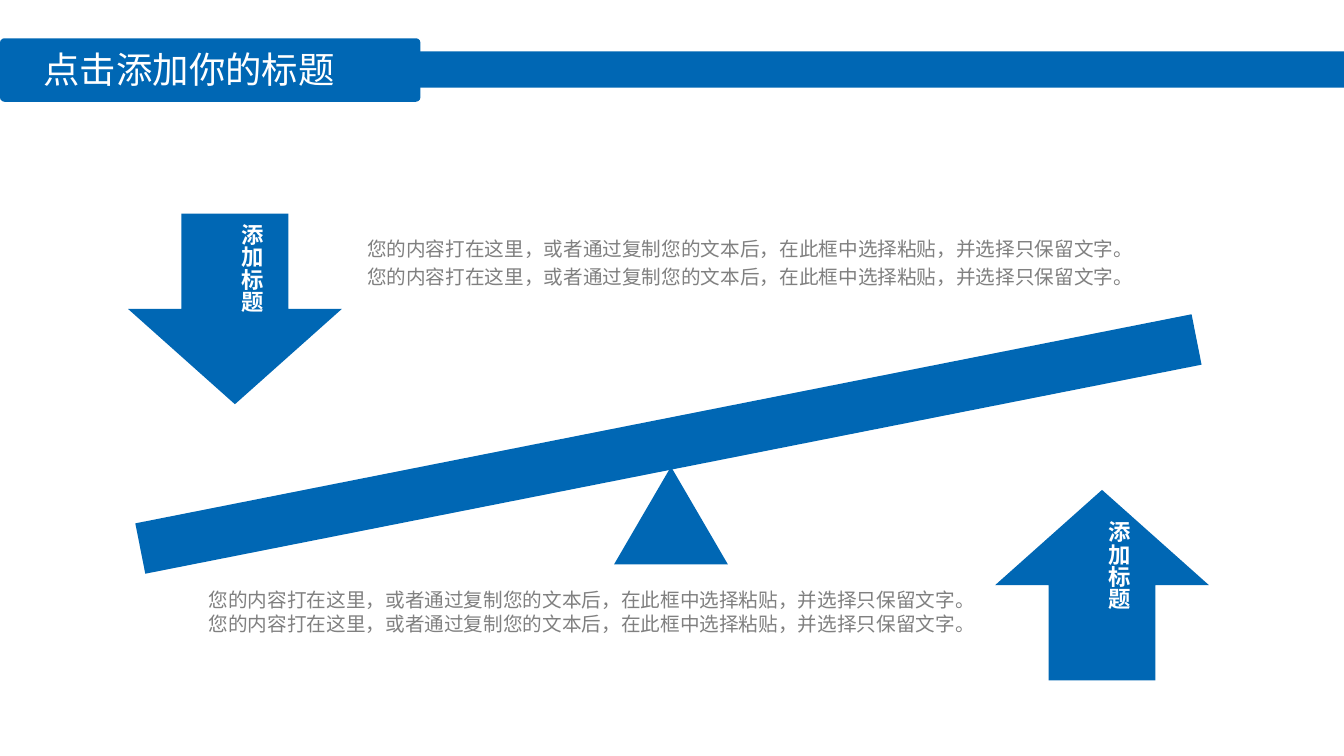
from lxml.etree import SubElement
from pptx import Presentation
from pptx.dml.color import RGBColor
from pptx.enum.shapes import MSO_SHAPE as SHAPE
from pptx.enum.text import MSO_ANCHOR as ANCHOR, MSO_AUTO_SIZE as AUTO, PP_ALIGN as ALIGN
from pptx.oxml.ns import qn
from pptx.util import Pt

PX = 9144  # 100 px to the inch
FONT = "Noto Sans CJK SC"
COLORS = {"blue": "0067B4", "gray": "808080", "white": "FFFFFF"}
SENTENCE = "您的内容打在这里，或者通过复制您的文本后，在此框中选择粘贴，并选择只保留文字。"


class Deck:
    def __init__(self, width, height):
        self.prs = Presentation()
        self.prs.slide_width, self.prs.slide_height = width * PX, height * PX
        self.s = self.prs.slides.add_slide(self.prs.slide_layouts[5])

    def shape(self, kind, x, y, w, h, rotation=0):
        sp = self.s.shapes.add_shape(kind, x * PX, y * PX, w * PX, h * PX)
        sp.shadow.inherit = False
        sp.fill.solid()
        sp.fill.fore_color.rgb = RGBColor.from_string(COLORS["blue"])
        sp.line.fill.background()
        sp.rotation = rotation
        return sp

    def add_text(self, tf, text, size, color, insets, bold=False):
        """Fill a frame with one paragraph; insets run left, top, right, bottom."""
        tf.word_wrap = True
        tf.auto_size = AUTO.NONE
        tf.margin_left, tf.margin_top, tf.margin_right, tf.margin_bottom = (
            n * PX for n in insets)
        p = tf.paragraphs[0]
        p.alignment = ALIGN.LEFT
        r = p.add_run()
        r.text = text
        r.font.size, r.font.bold, r.font.name = Pt(size), bold, FONT
        r.font.color.rgb = RGBColor.from_string(COLORS[color])
        SubElement(r._r.get_or_add_rPr(), qn("a:ea")).set("typeface", FONT)
        return p

    def title(self, text, x, y, w, h):
        sp = self.s.shapes.title
        sp.left, sp.top, sp.width, sp.height = x * PX, y * PX, w * PX, h * PX
        self.add_text(sp.text_frame, text, 26, "white", (10, 5, 10, 5))
        sp.text_frame.vertical_anchor = ANCHOR.MIDDLE
        self.s.shapes._spTree.append(sp._element)  # bring above the header bars

    def box(self, x, y, w, h):
        return self.s.shapes.add_textbox(x * PX, y * PX, w * PX, h * PX).text_frame

    def body(self, text, x, y, w, h, leading, top):
        p = self.add_text(self.box(x, y, w, h), text, 14, "gray", (7, top, 7, 4))
        p.line_spacing = Pt(leading)

    def arrow(self, kind, x, y, label, label_y):
        self.shape(kind, x, y, 212, 189)
        tf = self.box(x + 91, label_y, 47, 163)
        self.add_text(tf, label, 16, "white", (0, 8, 2, 5), bold=True)
        tf._txBody.bodyPr.set("vert", "eaVert")


def main():
    deck = Deck(1333, 750)
    deck.shape(SHAPE.RECTANGLE, 19, 51, 1314, 36)
    deck.shape(SHAPE.ROUNDED_RECTANGLE, 0, 38, 417, 63).adjustments[0] = 0.07
    deck.title("点击添加你的标题", 33, 41, 368, 54)

    deck.body(SENTENCE * 2, 357, 223, 769, 93, leading=20.4, top=7)
    deck.body(SENTENCE * 2, 200, 579, 784, 55, leading=17, top=4)

    deck.shape(SHAPE.RECTANGLE, 129, 415, 1068, 51, rotation=348.8)
    deck.arrow(SHAPE.DOWN_ARROW, 127, 212, "添加标题", 214)
    deck.arrow(SHAPE.UP_ARROW, 987, 486, "添加标题", 509)
    deck.shape(SHAPE.ISOSCELES_TRIANGLE, 609, 463, 113, 97)
    deck.prs.save("out.pptx")


if __name__ == "__main__":
    main()
